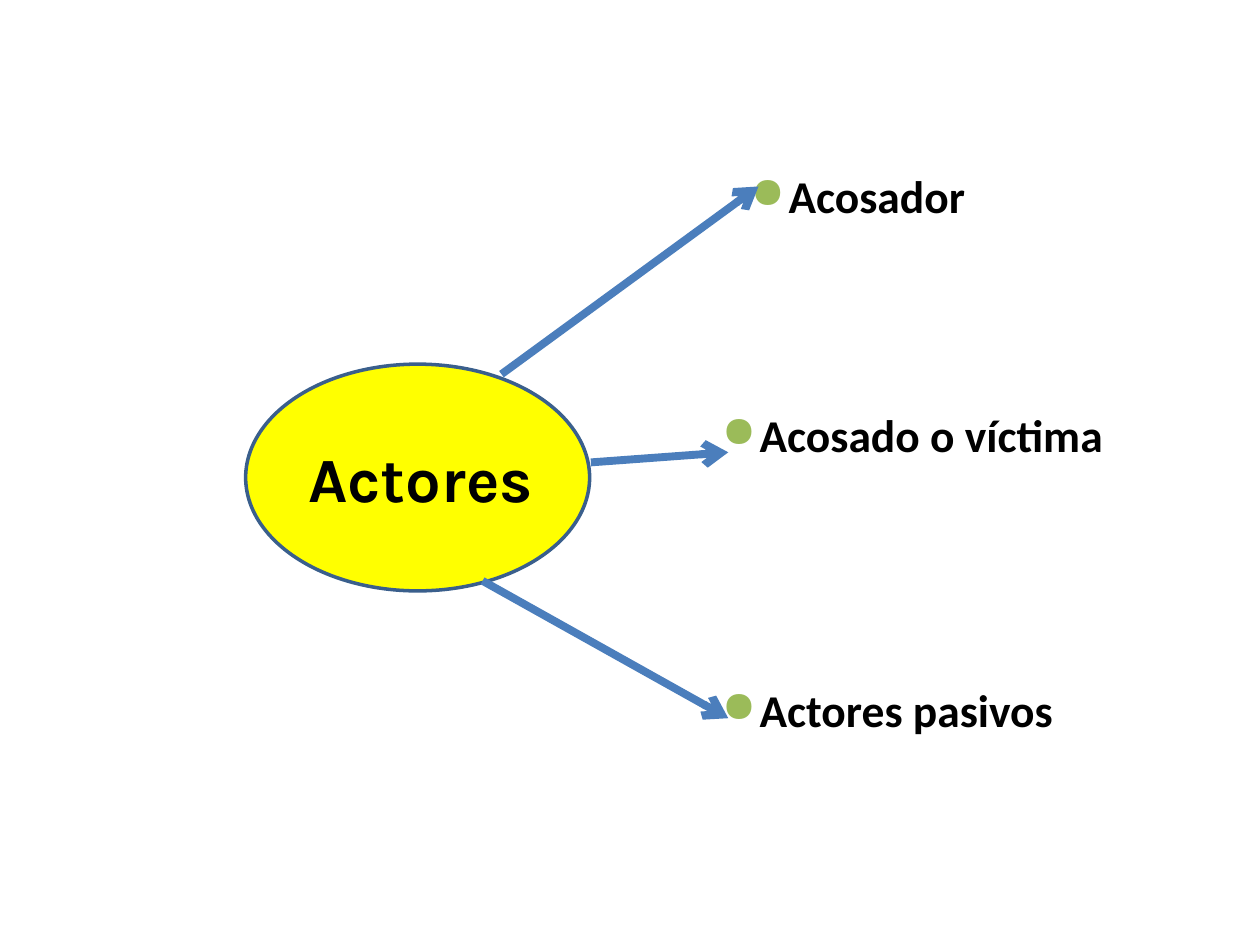
from dataclasses import dataclass

from lxml import etree
from pptx import Presentation
from pptx.dml.color import RGBColor
from pptx.enum.shapes import MSO_CONNECTOR, MSO_SHAPE
from pptx.enum.text import MSO_ANCHOR, MSO_AUTO_SIZE, PP_ALIGN
from pptx.oxml.ns import qn
from pptx.slide import Slide
from pptx.text.text import TextFrame
from pptx.util import Inches, Length, Pt

ELLIPSE = MSO_SHAPE.OVAL
STRAIGHT = MSO_CONNECTOR.STRAIGHT
TOP, MIDDLE = MSO_ANCHOR.TOP, MSO_ANCHOR.MIDDLE
CENTER, JUSTIFY = PP_ALIGN.CENTER, PP_ALIGN.JUSTIFY
NO_AUTOFIT = MSO_AUTO_SIZE.NONE

COLUMNS, ROWS = 100, 75
WIDTH, HEIGHT = Inches(10), Inches(7.5)


@dataclass(frozen=True)
class Theme:
    text: str = "000000"
    core_fill: str = "FFFF00"
    core_line: str = "3A5F8C"
    arrow: str = "4B7EBC"
    bullet: str = "9BBB59"
    title_font: str = "Karla"
    body_font: str = "Calibri"
    title_size: float = 36
    body_size: float = 26
    core_weight: float = 2
    arrow_weight: float = 4.5
    bullet_percent: int = 95
    bullet_indent: float = 0.3


@dataclass(frozen=True)
class Area:
    column: float
    row: float
    columns: float
    rows: float

    def lengths(self) -> tuple[Length, Length, Length, Length]:
        return (across(self.column), down(self.row),
                across(self.columns), down(self.rows))


@dataclass(frozen=True)
class Actor:
    label: str
    area: Area
    inset_rows: float
    arrow_start: tuple[float, float]
    arrow_end: tuple[float, float]


THEME = Theme()
CORE = Area(19.5, 28.9, 27.3, 18)
TITLE = Area(21.9, 34.4, 24.2, 7)
ACTORS = (
    Actor("Acosador", Area(58.6, 12.5, 28.1, 10.2), 0.8, (39.8, 29.7), (60.2, 14.8)),
    Actor("Acosado o víctima", Area(56.3, 26.6, 37.5, 14.8), 5.7, (46.9, 36.7), (57.8, 35.9)),
    Actor("Actores pasivos", Area(56.3, 48.4, 32.8, 14.8), 5.7, (38.3, 46.1), (57.8, 57)),
)


def across(columns: float) -> Length:
    return Length(round(WIDTH * columns / COLUMNS))


def down(rows: float) -> Length:
    return Length(round(HEIGHT * rows / ROWS))


def color(value: str) -> RGBColor:
    return RGBColor.from_string(value)


def write(frame: TextFrame, text: str, *, font: str, size: float, align: PP_ALIGN,
          anchor: MSO_ANCHOR, inset_rows: float = 0.5, bulleted: bool = False) -> None:
    frame.word_wrap = True
    frame.auto_size = NO_AUTOFIT
    frame.vertical_anchor = anchor
    frame.margin_top = down(inset_rows)
    paragraph = frame.paragraphs[0]
    paragraph.alignment = align
    if bulleted:
        add_bullet(paragraph._p.get_or_add_pPr())
    run = paragraph.add_run()
    run.text = text
    run.font.name = font
    run.font.size = Pt(size)
    run.font.bold = True
    run.font.color.rgb = color(THEME.text)


def add_bullet(properties: etree._Element) -> None:
    indent = Inches(THEME.bullet_indent)
    properties.set("marL", str(indent))
    properties.set("indent", str(-indent))
    tint = etree.SubElement(properties, qn("a:buClr"))
    etree.SubElement(tint, qn("a:srgbClr"), val=THEME.bullet)
    etree.SubElement(properties, qn("a:buSzPct"), val=str(THEME.bullet_percent * 1000))
    etree.SubElement(properties, qn("a:buChar"), char="●")


def draw_core(slide: Slide) -> None:
    core = slide.shapes.add_shape(ELLIPSE, *CORE.lengths())
    core.shadow.inherit = False
    core.fill.solid()
    core.fill.fore_color.rgb = color(THEME.core_fill)
    core.line.color.rgb = color(THEME.core_line)
    core.line.width = Pt(THEME.core_weight)
    slide.shapes._spTree.insert(2, core._element)


def draw_title(slide: Slide) -> None:
    title = slide.shapes.title
    title.left, title.top, title.width, title.height = TITLE.lengths()
    write(title.text_frame, "Actores ", font=THEME.title_font, size=THEME.title_size,
          align=CENTER, anchor=MIDDLE)


def draw_label(slide: Slide, actor: Actor) -> None:
    label = slide.shapes.add_textbox(*actor.area.lengths())
    write(label.text_frame, actor.label, font=THEME.body_font, size=THEME.body_size,
          align=JUSTIFY, anchor=TOP, inset_rows=actor.inset_rows, bulleted=True)


def draw_arrow(slide: Slide, actor: Actor) -> None:
    (start_column, start_row), (end_column, end_row) = actor.arrow_start, actor.arrow_end
    arrow = slide.shapes.add_connector(STRAIGHT, across(start_column), down(start_row),
                                       across(end_column), down(end_row))
    arrow.line.color.rgb = color(THEME.arrow)
    arrow.line.width = Pt(THEME.arrow_weight)
    etree.SubElement(arrow.line._get_or_add_ln(), qn("a:tailEnd"), type="arrow")
    etree.SubElement(arrow._element.spPr, qn("a:effectLst"))


def main() -> None:
    deck = Presentation()
    deck.slide_width, deck.slide_height = WIDTH, HEIGHT
    slide = deck.slides.add_slide(deck.slide_layouts.get_by_name("Title Only"))
    draw_core(slide)
    draw_title(slide)
    for actor in ACTORS:
        draw_label(slide, actor)
    for actor in ACTORS:
        draw_arrow(slide, actor)
    deck.save("out.pptx")


if __name__ == "__main__":
    main()
